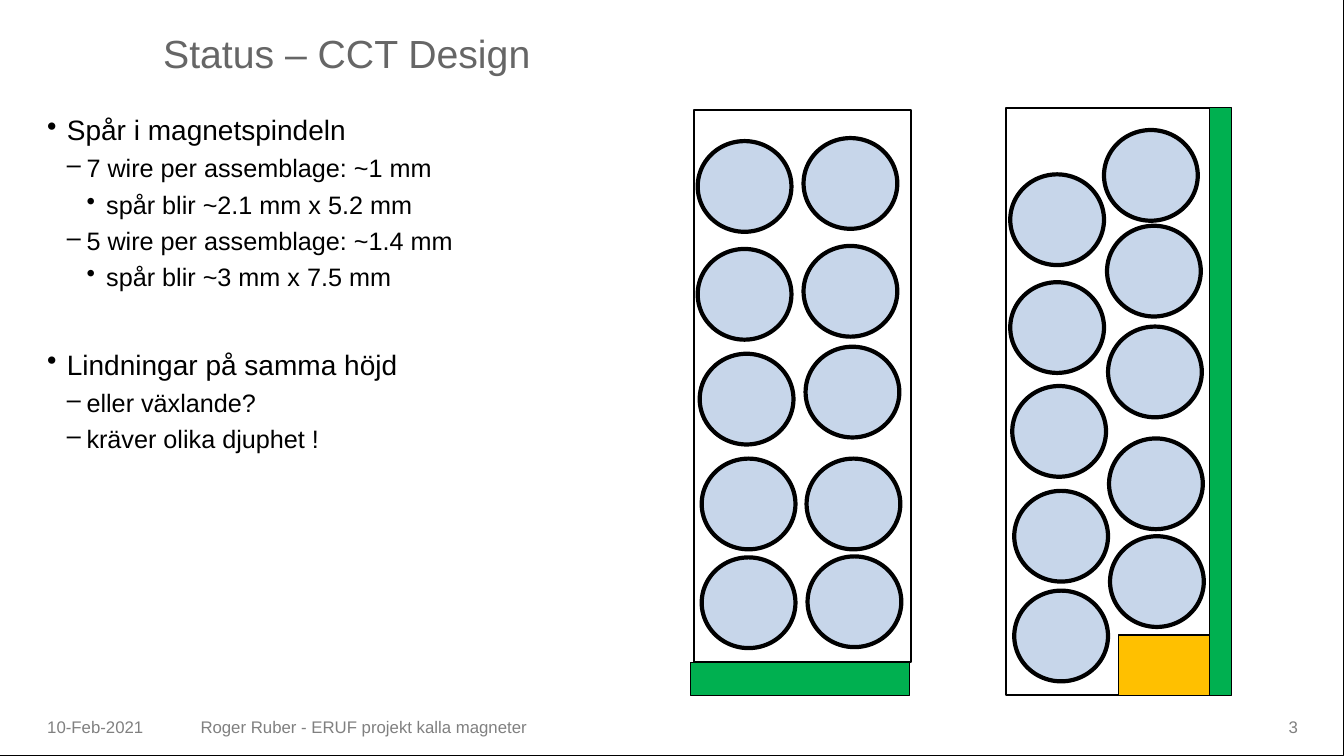
from dataclasses import dataclass
from typing import Optional

from lxml.etree import SubElement
from pptx import Presentation
from pptx.dml.color import RGBColor
from pptx.enum.shapes import MSO_SHAPE
from pptx.enum.text import MSO_ANCHOR, PP_ALIGN
from pptx.oxml.ns import qn
from pptx.shapes.shapetree import GroupShapes, SlideShapes
from pptx.slide import Slide
from pptx.util import Inches, Pt


@dataclass(frozen=True)
class Theme:
    font: str = "Arial"
    title: str = "666666"
    ink: str = "000000"
    footer: str = "808080"
    wire: str = "C7D6EA"
    cover: str = "00B050"
    spacer: str = "FFC000"
    title_size: int = 28
    level_sizes: tuple[int, ...] = (20, 18, 18)
    footer_size: int = 12
    thin: float = 0.75
    medium: float = 1.5
    thick: float = 3


@dataclass(frozen=True)
class Box:
    left: float
    top: float
    width: float
    height: float


@dataclass(frozen=True)
class Point:
    text: str
    level: int = 0
    space_before: float = 4.4


@dataclass(frozen=True)
class Footer:
    text: str
    box: Box
    align: PP_ALIGN = PP_ALIGN.LEFT


@dataclass(frozen=True)
class Groove:
    outline: Box
    wires: tuple[tuple[float, float], ...]
    spacer: Optional[Box] = None


THEME = Theme()
WIRE_WIDTH, WIRE_HEIGHT = 0.93, 0.9
BULLETS = "•–•"
BULLET_STEP = 0.195

POINTS = (
    Point("Spår i magnetspindeln", space_before=0),
    Point("7 wire per assemblage: ~1 mm", 1),
    Point("spår blir ~2.1 mm x 5.2 mm", 2),
    Point("5 wire per assemblage: ~1.4 mm", 1),
    Point("spår blir ~3 mm x 7.5 mm", 2),
    Point("Lindningar på samma höjd", space_before=39.5),
    Point("eller växlande?", 1),
    Point("kräver olika djuphet !", 1),
)

FOOTERS = (
    Footer("10-Feb-2021", Box(0.37, 7.06, 1.41, 0.28)),
    Footer("Roger Ruber - ERUF projekt kalla magneter", Box(1.89, 7.06, 9.92, 0.28)),
    Footer("3", Box(12.02, 7.06, 0.95, 0.28), PP_ALIGN.RIGHT),
)

GROOVES = (
    Groove(
        Box(6.88, 1.09, 2.16, 5.48),
        (
            (6.96, 5.53), (8.01, 5.52), (6.96, 4.55), (8.0, 4.55), (6.94, 3.51),
            (7.99, 3.44), (6.92, 2.47), (7.97, 2.44), (6.92, 1.4), (7.97, 1.37),
        ),
    ),
    Groove(
        Box(9.98, 1.07, 2.03, 5.83),
        (
            (10.06, 5.86), (11.01, 5.32), (10.06, 4.87), (11.0, 4.35), (10.04, 3.83),
            (10.99, 3.24), (10.02, 2.8), (10.98, 2.24), (10.02, 1.73), (10.95, 1.29),
        ),
        Box(11.09, 6.3, 0.93, 0.6),
    ),
)

COVERS = (Box(6.85, 6.57, 2.17, 0.33), Box(12, 1.07, 0.21, 5.83))


def place(box: Box) -> tuple[int, int, int, int]:
    return Inches(box.left), Inches(box.top), Inches(box.width), Inches(box.height)


def add_figure(
    shapes: SlideShapes | GroupShapes,
    box: Box,
    fill: Optional[str] = None,
    line: float = THEME.thin,
    kind: MSO_SHAPE = MSO_SHAPE.RECTANGLE,
) -> None:
    figure = shapes.add_shape(kind, *place(box))
    figure.shadow.inherit = False
    if fill:
        figure.fill.solid()
        figure.fill.fore_color.rgb = RGBColor.from_string(fill)
    else:
        figure.fill.background()
    figure.line.color.rgb = RGBColor.from_string(THEME.ink)
    figure.line.width = Pt(line)


def add_text(
    slide: Slide,
    box: Box,
    points: tuple[Point, ...],
    *,
    sizes: tuple[int, ...],
    color: str,
    align: PP_ALIGN = PP_ALIGN.LEFT,
    anchor: MSO_ANCHOR = MSO_ANCHOR.TOP,
    bottom: float = 0.05,
    bulleted: bool = False,
) -> None:
    frame = slide.shapes.add_textbox(*place(box)).text_frame
    frame.word_wrap = True
    frame.vertical_anchor = anchor
    frame.margin_bottom = Inches(bottom)
    for index, point in enumerate(points):
        paragraph = frame.add_paragraph() if index else frame.paragraphs[0]
        paragraph.alignment = align
        if bulleted:
            paragraph.level = point.level
            properties = paragraph._p.get_or_add_pPr()
            properties.set("marL", str(Inches(BULLET_STEP * (point.level + 1))))
            properties.set("indent", str(-Inches(BULLET_STEP)))
            SubElement(properties, qn("a:buChar"), char=BULLETS[point.level])
            paragraph.space_before = Pt(point.space_before)
        run = paragraph.add_run()
        run.text = point.text
        run.font.name = THEME.font
        run.font.size = Pt(sizes[point.level])
        run.font.color.rgb = RGBColor.from_string(color)


def add_groove(slide: Slide, groove: Groove) -> None:
    shapes = slide.shapes.add_group_shape().shapes
    add_figure(shapes, groove.outline, line=THEME.medium)
    if groove.spacer:
        add_figure(shapes, groove.spacer, THEME.spacer)
    for left, top in groove.wires:
        wire = Box(left, top, WIRE_WIDTH, WIRE_HEIGHT)
        add_figure(shapes, wire, THEME.wire, THEME.thick, MSO_SHAPE.OVAL)


def main() -> None:
    presentation = Presentation()
    presentation.slide_width, presentation.slide_height = Inches(13.33), Inches(7.5)
    slide = presentation.slides.add_slide(presentation.slide_layouts[6])

    add_figure(slide.shapes, Box(0, 0, 13.33, 7.5))
    add_text(slide, Box(1.52, 0.21, 11.19, 0.55), (Point("Status – CCT Design"),),
             sizes=(THEME.title_size,), color=THEME.title,
             anchor=MSO_ANCHOR.BOTTOM, bottom=0)
    add_text(slide, Box(0.37, 1.07, 12.6, 5.83), POINTS,
             sizes=THEME.level_sizes, color=THEME.ink, bulleted=True)
    for footer in FOOTERS:
        add_text(slide, footer.box, (Point(footer.text),),
                 sizes=(THEME.footer_size,), color=THEME.footer, align=footer.align)
    for groove in GROOVES:
        add_groove(slide, groove)
    for cover in COVERS:
        add_figure(slide.shapes, cover, THEME.cover)

    presentation.save("out.pptx")


if __name__ == "__main__":
    main()
